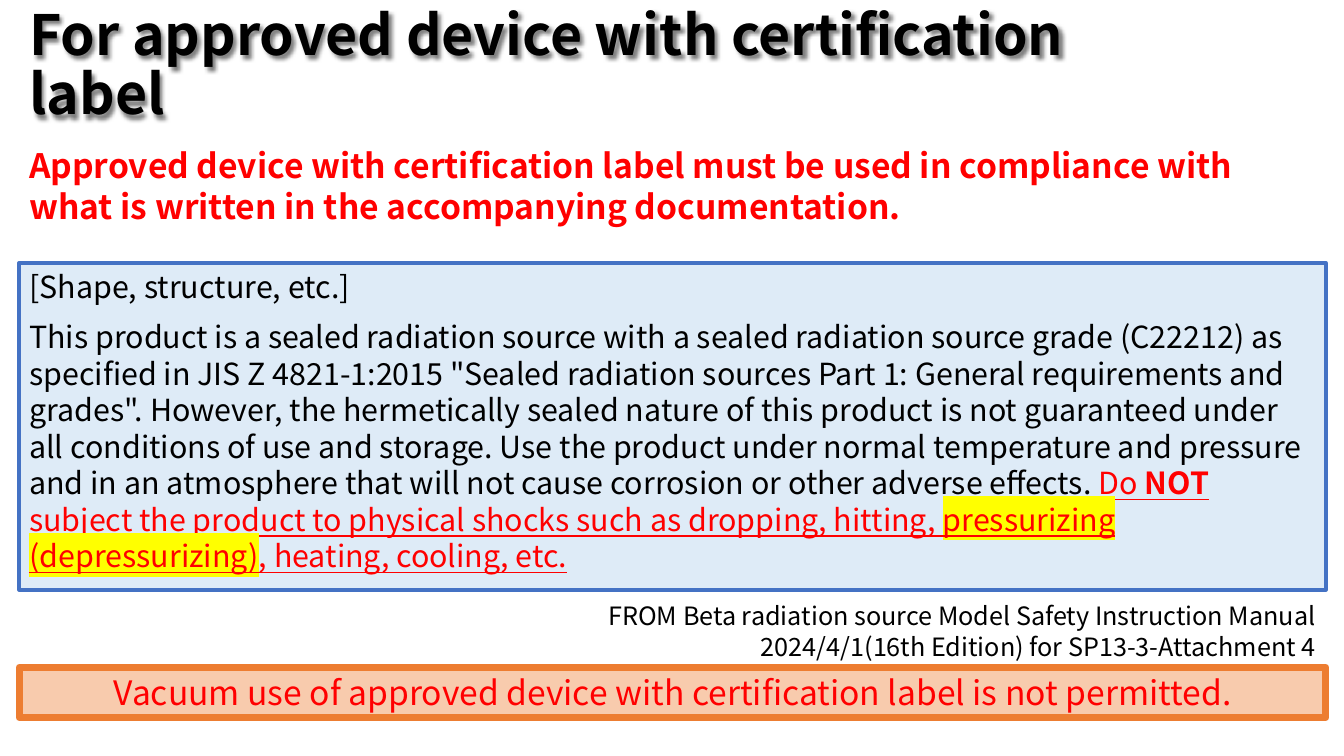
"""Build a slide on the rules for using an approved device with a certification label."""
from dataclasses import dataclass

from lxml import etree
from pptx import Presentation
from pptx.dml.color import RGBColor
from pptx.enum import shapes, text
from pptx.oxml import ns
from pptx.util import Inches, Pt


@dataclass(frozen=True)
class Theme:
    """Hold the font, colours and type sizes of the slide."""
    font: str = "Noto Sans CJK JP"
    ink: str = "000000"
    warning: str = "FF0000"
    marker: str = "FFFF00"
    shade: str = "808080"
    quote_fill: str = "DEEBF7"
    quote_line: str = "4472C4"
    ban_fill: str = "F8CBAD"
    ban_line: str = "ED7D31"
    title_size: float = 39.6
    lead_size: float = 24
    quote_size: float = 21.7
    source_size: float = 18


THEME = Theme()
LEFT, WIDTH = 0.19, 12.96
PASSAGE = (
    "This product is a sealed radiation source with a sealed radiation source grade "
    "(C22212) as specified in JIS Z 4821-1:2015 \"Sealed radiation sources Part 1: General "
    "requirements and grades\". However, the hermetically sealed nature of this product is "
    "not guaranteed under all conditions of use and storage. Use the product under normal "
    "temperature and pressure and in an atmosphere that will not cause corrosion or other "
    "adverse effects. "
)


def apply(target, formats):
    """Set each named attribute of the target."""
    for name, value in formats.items():
        setattr(target, name, value)


def place(shape, left, top, width, height):
    """Move and size a shape in inches."""
    apply(shape, {"left": Inches(left), "top": Inches(top),
                  "width": Inches(width), "height": Inches(height)})


def paint(shape, fill, line, weight):
    """Give a shape a plain fill and outline."""
    shape.fill.solid()
    shape.fill.fore_color.rgb = RGBColor.from_string(fill)
    shape.line.color.rgb = RGBColor.from_string(line)
    shape.line.width = Pt(weight)


def add_color(parent, color):
    """Append a solid fill to an XML element."""
    fill = etree.SubElement(parent, ns.qn("a:solidFill"))
    etree.SubElement(fill, ns.qn("a:srgbClr"), val=color)


def highlight(run):
    """Mark a run with the marker colour."""
    mark = etree.Element(ns.qn("a:highlight"))
    etree.SubElement(mark, ns.qn("a:srgbClr"), val=THEME.marker)
    run.font._element.find(ns.qn("a:solidFill")).addnext(mark)


def write(paragraph, wording, size, color=THEME.ink, **formats):
    """Add a formatted run to a paragraph."""
    run = paragraph.add_run()
    run.text = wording
    apply(run.font, {"name": THEME.font, "size": Pt(size), **formats})
    run.font.color.rgb = RGBColor.from_string(color)
    return run


def write_lines(frame, lines, size, color, align, **formats):
    """Write one paragraph for each line into a frame that fits its text."""
    apply(frame, {"word_wrap": True, "auto_size": text.MSO_AUTO_SIZE.SHAPE_TO_FIT_TEXT})
    for index, line in enumerate(lines):
        paragraph = frame.add_paragraph() if index else frame.paragraphs[0]
        paragraph.alignment = align
        write(paragraph, line, size, color, **formats)


def add_title(slide, wording):
    """Fill the title with outlined, shadowed text."""
    title = slide.shapes.title
    place(title, LEFT, 0.15, 11.72, 1.03)
    apply(title.text_frame, {"vertical_anchor": text.MSO_ANCHOR.MIDDLE, "word_wrap": True,
                             "auto_size": text.MSO_AUTO_SIZE.NONE})
    paragraph = title.text_frame.paragraphs[0]
    apply(paragraph, {"alignment": text.PP_ALIGN.LEFT, "line_spacing": 0.9})
    run = write(paragraph, wording, THEME.title_size, bold=True)
    outline = etree.Element(ns.qn("a:ln"), w=str(Pt(0.75)))
    add_color(outline, THEME.shade)
    run.font._element.insert(0, outline)
    effects = etree.SubElement(title._element.spPr, ns.qn("a:effectLst"))
    shadow = etree.SubElement(effects, ns.qn("a:outerShdw"), blurRad=str(Pt(3)),
                              dist=str(Pt(3)), dir="2700000", algn="tl")
    etree.SubElement(shadow, ns.qn("a:srgbClr"), val=THEME.shade)


def add_quote(slide):
    """Fill the body with the quoted safety instructions."""
    quote = slide.placeholders[1]
    place(quote, LEFT, 2.61, WIDTH, 3.24)
    paint(quote, THEME.quote_fill, THEME.quote_line, 2.75)
    frame = quote.text_frame
    apply(frame, {"word_wrap": True, "auto_size": text.MSO_AUTO_SIZE.NONE,
                  "vertical_anchor": text.MSO_ANCHOR.TOP})
    heading, passage = frame.paragraphs[0], frame.add_paragraph()
    for paragraph in (heading, passage):
        apply(paragraph, {"space_before": Pt(10), "line_spacing": 1.0})
        properties = paragraph._p.get_or_add_pPr()
        properties.set("marL", "0")
        properties.set("indent", "0")
        etree.SubElement(properties, ns.qn("a:buNone"))
    write(heading, "[Shape, structure, etc.]", THEME.quote_size)
    write(passage, PASSAGE, THEME.quote_size)
    for wording, bold, marked in (
        ("Do ", False, False),
        ("NOT", True, False),
        (" subject the product to physical shocks such as dropping, hitting, ", False, False),
        ("pressurizing (depressurizing)", False, True),
        (", heating, cooling, etc.", False, False),
    ):
        run = write(passage, wording, THEME.quote_size, THEME.warning,
                    bold=bold, underline=True)
        if marked:
            highlight(run)


def add_note(slide, box, lines, size, color, align, **formats):
    """Add a text box with one paragraph for each line."""
    note = slide.shapes.add_textbox(*map(Inches, box))
    write_lines(note.text_frame, lines, size, color, align, **formats)


def add_ban(slide, wording):
    """Add the framed prohibition at the foot of the slide."""
    ban = slide.shapes.add_shape(shapes.MSO_SHAPE.RECTANGLE,
                                 *map(Inches, (LEFT, 6.62, WIDTH, 0.5)))
    ban.shadow.inherit = False
    paint(ban, THEME.ban_fill, THEME.ban_line, 5)
    write_lines(ban.text_frame, [wording], THEME.lead_size, THEME.warning,
                text.PP_ALIGN.CENTER)


def main():
    """Build and save the slide."""
    deck = Presentation()
    apply(deck, {"slide_width": Inches(13.33), "slide_height": Inches(7.5)})
    slide = deck.slides.add_slide(deck.slide_layouts[1])
    add_quote(slide)
    add_title(slide, "For approved device with certification label")
    add_note(slide, (LEFT, 1.39, WIDTH, 0.91),
             ["Approved device with certification label must be used in compliance with "
              "what is written in the accompanying documentation."],
             THEME.lead_size, THEME.warning, text.PP_ALIGN.LEFT, bold=True)
    add_note(slide, (5.37, 5.91, 7.78, 0.71),
             ["FROM Beta radiation source Model Safety Instruction Manual",
              "2024/4/1(16th Edition) for SP13-3-Attachment 4"],
             THEME.source_size, THEME.ink, text.PP_ALIGN.RIGHT)
    add_ban(slide, "Vacuum use of approved device with certification label is not permitted.")
    deck.save("out.pptx")


if __name__ == "__main__":
    main()
